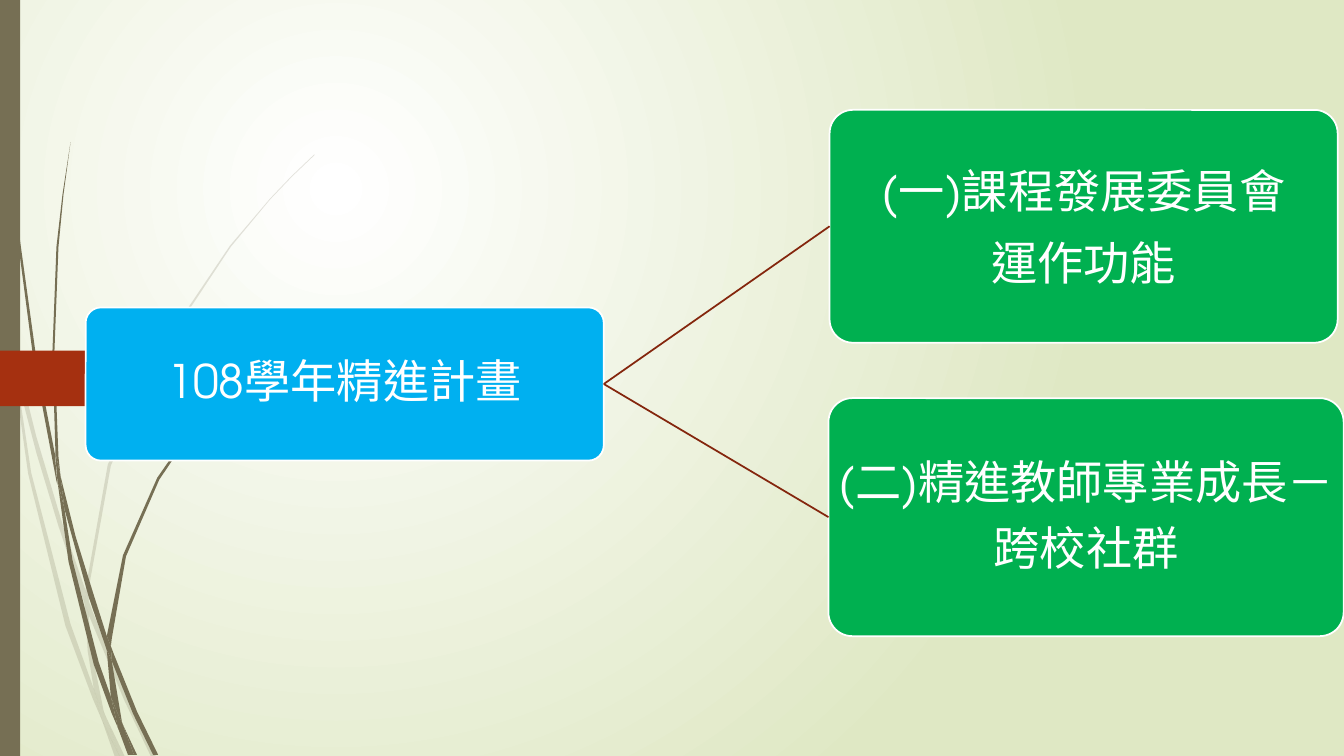
from lxml.etree import SubElement
from pptx import Presentation
from pptx.dml.color import RGBColor
from pptx.enum.lang import MSO_LANGUAGE_ID
from pptx.enum.shapes import MSO_CONNECTOR, MSO_SHAPE
from pptx.enum.text import MSO_ANCHOR, PP_ALIGN
from pptx.oxml.ns import qn
from pptx.util import Pt

FONT = "TeX Gyre Adventor"
WHITE, CREAM, OLIVE, RED = "FFFFFF", "DFE8C4", "766F54", "A53010"
BLUE, GREEN, BROWN = "00B0F0", "00B050", "84260D"

# text, (left, top, width, height) in points, fill, line spacing
ROOT = (["108學年精進計畫"], (61.2, 219.6, 370.1, 109.4), BLUE, 0.9)
BRANCHES = [
    (["(一)課程發展委員會", "運作功能"], (592.6, 78.5, 362.9, 166.3), GREEN, 1.0),
    (["(二)精進教師專業成長－", "跨校社群"], (591.8, 284.4, 368, 170), GREEN, 0.9),
]

# Grass blade outlines, in units of 0.72 point
GRASS_UNIT = Pt(0.72)
PALE_GRASS = [
    [(11, 350), (9, 322), (0, 282), (0, 299), (10, 344)],
    [(58, 522), (84, 599), (85, 586), (62, 520), (36, 433), (14, 345), (17, 376), (36, 449)],
    [(92, 607), (88, 596), (88, 610), (123, 694), (150, 751), (155, 751), (127, 692)],
    [(119, 751), (124, 751), (105, 711)],
    [(93, 683), (70, 619), (31, 469), (17, 376), (11, 350), (28, 470), (65, 621),
     (92, 693), (101, 714), (99, 707)],
    [(84, 599), (87, 646), (93, 683), (96, 692), (105, 711), (103, 706), (91, 646),
     (88, 610), (88, 608)],
    [(88, 584), (110, 462), (160, 349), (229, 245), (268, 198), (290, 175), (312, 154),
     (312, 153), (289, 175), (268, 197), (228, 244), (158, 348), (107, 461), (85, 584),
     (85, 586), (88, 596)],
    [(101, 714), (114, 751), (119, 751)],
    [(88, 608), (88, 610), (88, 596), (85, 586), (84, 599)],
    [(96, 692), (93, 683), (99, 707), (101, 714), (119, 751), (105, 711)],
]
DARK_GRASS = [
    [(7, 110), (17, 233), (33, 355), (56, 477), (57, 481), (55, 457), (55, 453), (36, 355),
     (19, 232), (8, 109), (5, 48), (4, 0), (3, 0), (4, 48)],
    [(88, 592), (106, 645), (106, 633), (106, 631), (93, 590), (75, 532), (60, 472), (64, 505)],
    [(113, 649), (110, 641), (111, 656), (132, 708), (152, 749), (157, 749), (136, 706)],
    [(110, 691), (98, 657), (72, 556), (64, 505), (57, 477), (68, 557), (93, 659),
     (111, 708), (117, 722), (116, 717)],
    [(60, 472), (58, 453), (54, 349), (58, 245), (63, 193), (70, 141), (62, 193), (56, 245),
     (52, 349), (55, 449)],
    [(133, 749), (136, 749), (122, 719)],
    [(57, 477), (64, 505), (60, 472), (55, 449), (55, 453)],
    [(111, 633), (125, 552), (158, 476), (205, 406), (231, 374), (245, 359), (261, 344),
     (260, 344), (245, 358), (231, 373), (204, 405), (156, 474), (122, 551), (106, 631),
     (110, 641)],
    [(117, 722), (127, 749), (131, 749)],
    [(106, 645), (110, 691), (116, 706), (122, 719), (121, 716), (111, 656), (109, 651)],
    [(106, 645), (109, 651), (111, 656), (110, 641), (106, 631), (106, 633)],
    [(116, 706), (110, 691), (116, 717), (117, 722), (130, 749), (133, 749), (122, 719)],
]


def color(hex_string):
    return RGBColor.from_string(hex_string)


def paint(shape, fill, line=None):
    shape.shadow.inherit = False
    shape.fill.solid()
    shape.fill.fore_color.rgb = color(fill)
    if line:
        shape.line.color.rgb = color(line)
        shape.line.width = Pt(1.25)
    else:
        shape.line.fill.background()


def add_background(slide):
    """Fill the slide with a radial gradient centred in the upper left."""
    fill = slide.background.fill
    fill.gradient()
    for stop, hex_string in zip(fill.gradient_stops, (WHITE, CREAM)):
        stop.color.rgb = color(hex_string)
    gradient = slide.element.find(".//" + qn("a:gradFill"))
    gradient.remove(gradient.find(qn("a:lin")))
    circle = SubElement(gradient, qn("a:path"), path="circle")
    SubElement(circle, qn("a:fillToRect"), l="50000", t="50000", r="100000", b="100000")


def add_grass(slide, outlines, opacity=None):
    group = slide.shapes.add_group_shape()
    for start, *points in outlines:
        builder = group.shapes.build_freeform(*start, scale=GRASS_UNIT)
        builder.add_line_segments(points, close=True)
        blade = builder.convert_to_shape()
        paint(blade, OLIVE)
        if opacity:
            fill_color = blade.fill.fore_color
            fill_color.rgb = color(OLIVE)
            srgb = blade.element.spPr.find(qn("a:solidFill")).find(qn("a:srgbClr"))
            SubElement(srgb, qn("a:alpha"), val=str(opacity * 1000))


def add_block(slide, preset, box, fill, line=None):
    shape = slide.shapes.add_shape(preset, *(Pt(length) for length in box))
    paint(shape, fill, line)
    return shape


def add_plan_box(slide, lines, box, fill, line_spacing):
    shape = add_block(slide, MSO_SHAPE.ROUNDED_RECTANGLE, box, fill, WHITE)
    shape.adjustments[0] = 0.1
    frame = shape.text_frame
    frame.word_wrap = True
    frame.vertical_anchor = MSO_ANCHOR.MIDDLE
    frame.margin_left = frame.margin_right = Pt(1.5)
    frame.margin_top = frame.margin_bottom = Pt(1.5)
    frame.text = "\n".join(lines)
    for paragraph in frame.paragraphs:
        paragraph.alignment = PP_ALIGN.CENTER
        paragraph.line_spacing = line_spacing
        paragraph.space_after = Pt(11.55)
        for run in paragraph.runs:
            run.font.name = FONT
            run.font.size = Pt(33)
            run.font.color.rgb = color(WHITE)
            run.font.language_id = MSO_LANGUAGE_ID.TRADITIONAL_CHINESE
    return shape


def join(slide, root, branch):
    connector = slide.shapes.add_connector(MSO_CONNECTOR.STRAIGHT, 0, 0, 0, 0)
    connector.begin_connect(root, 3)
    connector.end_connect(branch, 1)
    connector.line.color.rgb = color(BROWN)
    connector.line.width = Pt(1.25)
    SubElement(connector.element.spPr, qn("a:effectLst"))


def main():
    presentation = Presentation()
    presentation.slide_width, presentation.slide_height = Pt(960), Pt(540)
    slide = presentation.slides.add_slide(presentation.slide_layouts[6])
    add_background(slide)
    add_grass(slide, PALE_GRASS, opacity=20)
    add_grass(slide, DARK_GRASS)
    add_block(slide, MSO_SHAPE.RECTANGLE, (0, 0, 14.4, 540), OLIVE)
    add_block(slide, MSO_SHAPE.PENTAGON, (0, 250.5, 125, 39.6), RED)
    root = add_plan_box(slide, *ROOT)
    for branch in BRANCHES:
        join(slide, root, add_plan_box(slide, *branch))
    presentation.save("out.pptx")


if __name__ == "__main__":
    main()
